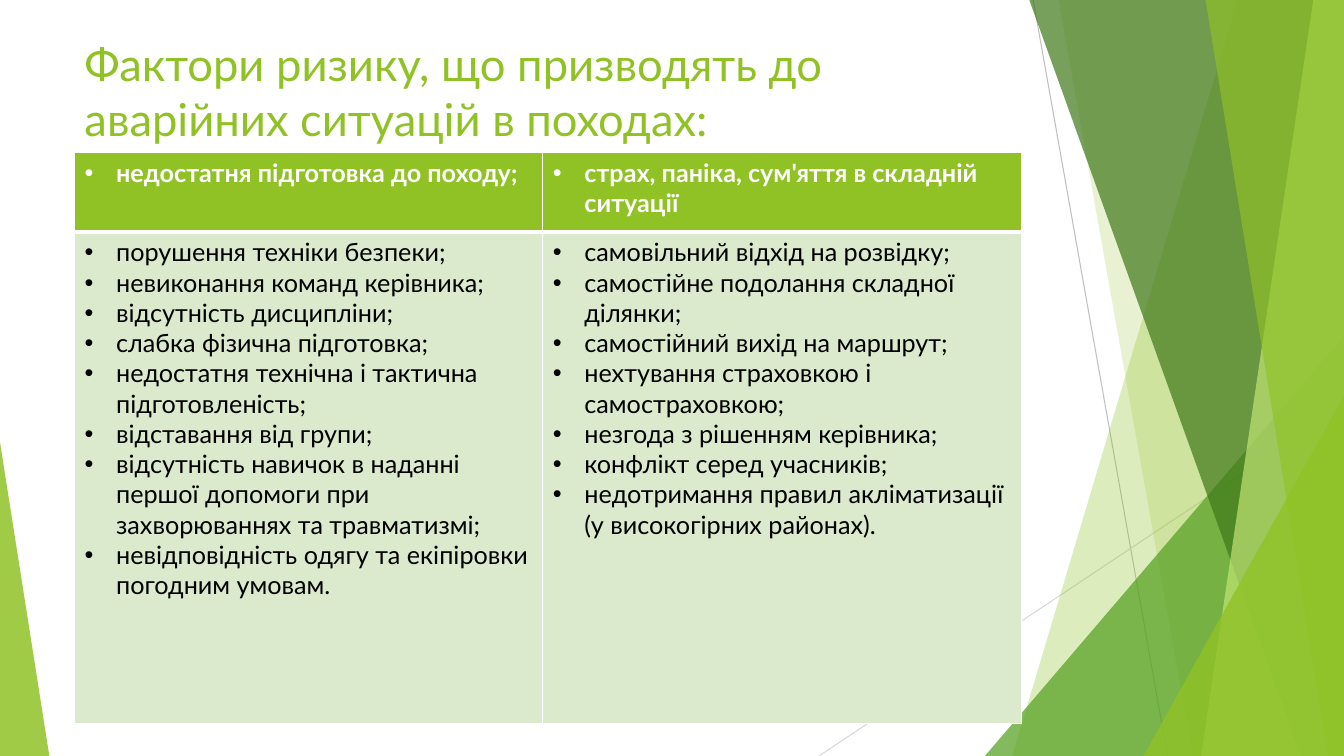
from dataclasses import dataclass

from lxml.etree import SubElement
from pptx import Presentation
from pptx.dml.color import RGBColor
from pptx.enum.shapes import MSO_CONNECTOR, MSO_SHAPE
from pptx.enum.text import MSO_ANCHOR
from pptx.oxml.ns import qn
from pptx.util import Emu, Pt

PX = 9525
WIDTH, HEIGHT = 1280, 720
BAND_TOP = -1
INDENT = 30
FONT = "Lato"
COLORS = {
    "lime": "90C226",
    "pale_lime": "C0E474",
    "green": "54A021",
    "dark_green": "3F7819",
    "mint": "DBE9CD",
    "white": "FFFFFF",
    "black": "000000",
    "grey": "BFBFBF",
    "light_grey": "D9D9D9",
}


@dataclass
class Ray:
    x1: int
    y1: int
    x2: int
    y2: int
    color: str


@dataclass
class Band:
    top_x: int
    bottom_x: int
    color: str
    opacity: int


@dataclass
class Corner:
    left: int
    top: int
    width: int
    apex: int
    color: str
    opacity: int


@dataclass
class Row:
    height: int
    fill: str
    color: str
    bold: bool
    top_border: int
    bottom_border: int
    cells: list[list[str]]


RAYS = [
    Ray(984, 0, 1112, 720, "grey"),
    Ray(1280, 387, 780, 720, "light_grey"),
]
FACETS = [
    Band(1179, 964, "lime", 30),
    Band(1008, 1136, "lime", 20),
    Corner(938, 320, 342, 1, "green", 72),
    Band(980, 1239, "dark_green", 70),
    Band(1251, 1144, "pale_lime", 70),
    Band(1148, 1265, "lime", 65),
    Corner(1089, 377, 191, 1, "lime", 80),
    Corner(0, 421, 47, 0, "lime", 85),
]
TITLE = "Фактори ризику, що призводять до аварійних ситуацій в походах:"
COLUMNS = [446, 456]
ROWS = [
    Row(76, "lime", "white", True, 1, 3, [
        ["недостатня підготовка до походу;"],
        ["страх, паніка, сум'яття в складній ситуації"],
    ]),
    Row(468, "mint", "black", False, 3, 1, [
        [
            "порушення техніки безпеки;",
            "невиконання команд керівника;",
            "відсутність дисципліни;",
            "слабка фізична підготовка;",
            "недостатня технічна і тактична підготовленість;",
            "відставання від групи;",
            "відсутність навичок в наданні першої допомоги при захворюваннях та травматизмі;",
            "невідповідність одягу та екіпіровки погодним умовам.",
        ],
        [
            "самовільний відхід на розвідку;",
            "самостійне подолання складної ділянки;",
            "самостійний вихід на маршрут;",
            "нехтування страховкою і самостраховкою;",
            "незгода з рішенням керівника;",
            "конфлікт серед учасників;",
            "недотримання правил акліматизації (у високогірних районах).",
        ],
    ]),
]


def px(n: int) -> Emu:
    return Emu(n * PX)


def rgb(name: str) -> RGBColor:
    return RGBColor.from_string(COLORS[name])


def write(tf, lines: list[str], *, size: float, color: str,
          bold: bool = False, bullet: bool = False) -> None:
    tf.word_wrap = True
    for i, line in enumerate(lines):
        p = tf.paragraphs[0] if i == 0 else tf.add_paragraph()
        if bullet:
            pPr = p._p.get_or_add_pPr()
            pPr.set("marL", str(px(INDENT)))
            pPr.set("indent", str(px(-INDENT)))
            SubElement(pPr, qn("a:buFont"), typeface="Arial")
            SubElement(pPr, qn("a:buChar"), char="•")
        r = p.add_run()
        r.text = line
        r.font.name = FONT
        r.font.size = Pt(size)
        r.font.bold = bold
        r.font.color.rgb = rgb(color)


def draw_ray(s, ray: Ray) -> None:
    line = s.shapes.add_connector(
        MSO_CONNECTOR.STRAIGHT, px(ray.x1), px(ray.y1), px(ray.x2), px(ray.y2))
    line.line.color.rgb = rgb(ray.color)
    line.line.width = Pt(0.75)
    SubElement(line._element.spPr, qn("a:effectLst"))


def draw_facet(s, facet: Band | Corner) -> None:
    if isinstance(facet, Band):
        builder = s.shapes.build_freeform(facet.top_x, BAND_TOP, scale=PX)
        builder.add_line_segments(
            [(WIDTH, BAND_TOP), (WIDTH, HEIGHT), (facet.bottom_x, HEIGHT)], close=True)
        sp = builder.convert_to_shape()
    else:
        sp = s.shapes.add_shape(
            MSO_SHAPE.ISOSCELES_TRIANGLE, px(facet.left), px(facet.top),
            px(facet.width), px(HEIGHT - facet.top))
        sp.adjustments[0] = facet.apex
    sp.shadow.inherit = False
    sp.line.fill.background()
    sp.fill.solid()
    sp.fill.fore_color.rgb = rgb(facet.color)
    clr = sp._element.spPr.find(qn("a:solidFill")).find(qn("a:srgbClr"))
    SubElement(clr, qn("a:alpha"), val=str(facet.opacity * 1000))


def add_title(s) -> None:
    tf = s.shapes.add_textbox(px(71), px(30), px(902), px(110)).text_frame
    tf.vertical_anchor = MSO_ANCHOR.TOP
    write(tf, [TITLE], size=32.4, color="lime")


def set_borders(cell, top: int, bottom: int) -> None:
    tcPr = cell._tc.get_or_add_tcPr()
    for side, width in {"L": 1, "R": 1, "T": top, "B": bottom}.items():
        ln = SubElement(tcPr, qn(f"a:ln{side}"), w=str(Pt(width)))
        fill = SubElement(ln, qn("a:solidFill"))
        SubElement(fill, qn("a:srgbClr"), val=COLORS["white"])


def add_risk_table(s) -> None:
    table = s.shapes.add_table(
        len(ROWS), len(COLUMNS), px(71), px(145), px(sum(COLUMNS)),
        px(sum(row.height for row in ROWS))).table
    for column, width in zip(table.columns, COLUMNS):
        column.width = px(width)
    for i, row in enumerate(ROWS):
        table.rows[i].height = px(row.height)
        for j, lines in enumerate(row.cells):
            cell = table.cell(i, j)
            set_borders(cell, row.top_border, row.bottom_border)
            cell.fill.solid()
            cell.fill.fore_color.rgb = rgb(row.fill)
            write(cell.text_frame, lines, size=18, color=row.color,
                  bold=row.bold, bullet=True)


def main() -> None:
    prs = Presentation()
    prs.slide_width, prs.slide_height = px(WIDTH), px(HEIGHT)
    s = prs.slides.add_slide(prs.slide_layouts[6])
    for ray in RAYS:
        draw_ray(s, ray)
    for facet in FACETS:
        draw_facet(s, facet)
    add_title(s)
    add_risk_table(s)
    prs.save("out.pptx")


if __name__ == "__main__":
    main()
